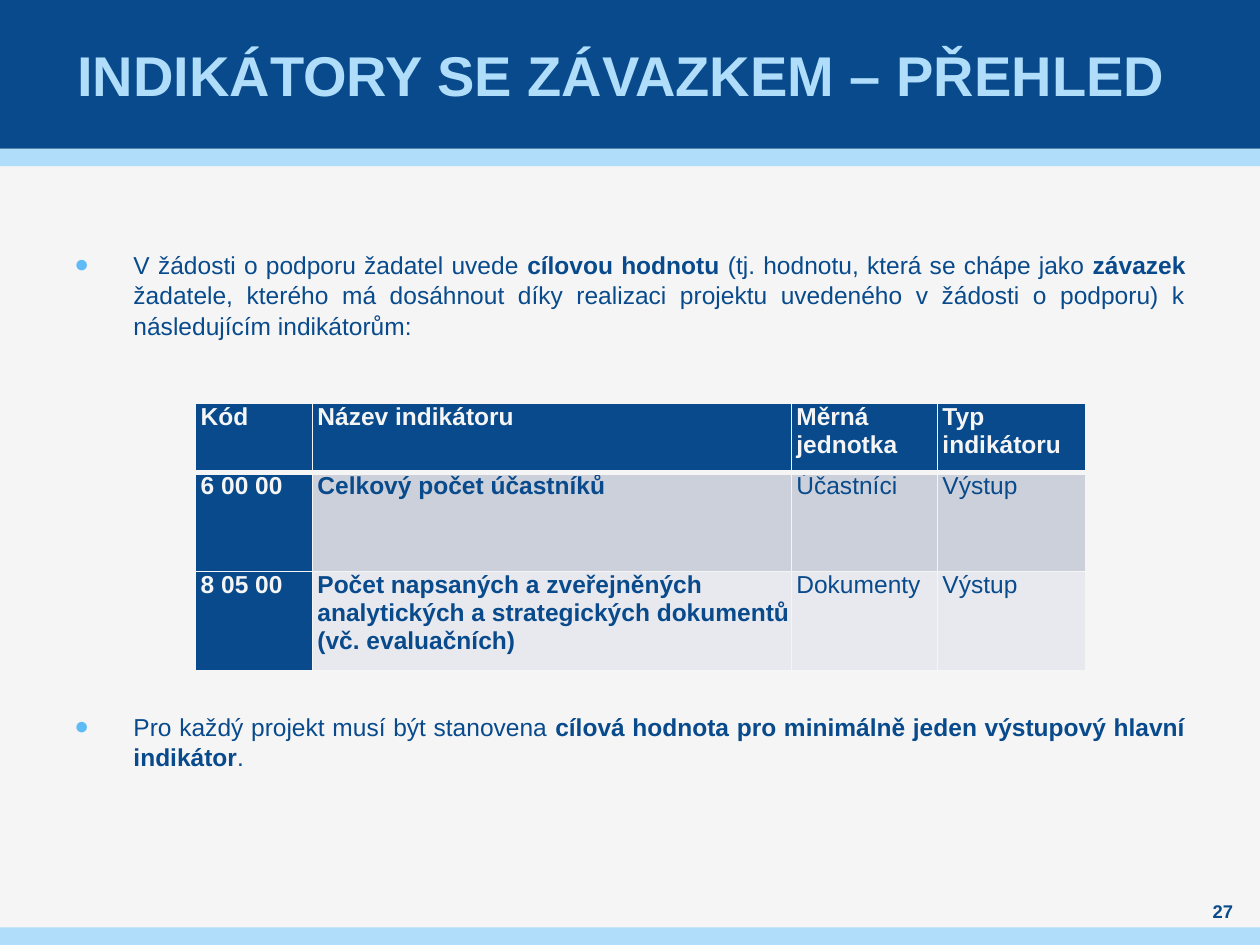
from lxml.etree import SubElement
from pptx import Presentation
from pptx.dml.color import RGBColor
from pptx.enum.shapes import MSO_SHAPE
from pptx.enum.text import MSO_ANCHOR, PP_ALIGN
from pptx.oxml.ns import qn
from pptx.util import Pt

NAVY = RGBColor(0x08, 0x4A, 0x8B)
SKY = RGBColor(0xAF, 0xDD, 0xFA)
BULLET_BLUE = RGBColor(0x5F, 0xBB, 0xF5)
OFF_WHITE = RGBColor(0xF5, 0xF5, 0xF5)
GREY = RGBColor(0xCC, 0xD0, 0xDA)
LIGHT_GREY = RGBColor(0xE7, 0xE9, 0xEE)

INDENT = Pt(33.8)
BODY_SIZE = 14
COLUMN_WIDTHS = (66.7, 273.7, 83.5, 85)
ROW_HEIGHTS = (39.6, 56.7, 56.7)
ROW_FILLS = (NAVY, GREY, LIGHT_GREY)
INDICATORS = (
    ("Kód", "Název indikátoru", "Měrná jednotka", "Typ indikátoru"),
    ("6 00 00", "Celkový počet účastníků", "Účastníci", "Výstup"),
    ("8 05 00", "Počet napsaných a zveřejněných analytických a strategických "
     "dokumentů (vč. evaluačních)", "Dokumenty", "Výstup"),
)
COMMITMENT = (
    ("V žádosti o podporu žadatel uvede ", False),
    ("cílovou hodnotu ", True),
    ("(tj. hodnotu, která se chápe jako ", False),
    ("závazek", True),
    (" žadatele, kterého má dosáhnout díky realizaci projektu uvedeného "
     "v žádosti o podporu) k následujícím indikátorům:", False),
)
REQUIREMENT = (
    ("Pro každý projekt musí být stanovena ", False),
    ("cílová hodnota pro minimálně jeden výstupový hlavní indikátor", True),
    (".", False),
)


def style_font(font, size, color, bold=None):
    font.name = "Arial"
    font.size = Pt(size)
    font.color.rgb = color
    font.bold = bold


def add_band(page, top, height, color):
    band = page.shapes.add_shape(MSO_SHAPE.RECTANGLE, 0, Pt(top), Pt(720), Pt(height))
    band.shadow.inherit = False
    band.fill.solid()
    band.fill.fore_color.rgb = color
    band.line.fill.background()


def add_text_box(page, left, top, width, height, anchor=MSO_ANCHOR.TOP):
    box = page.shapes.add_textbox(Pt(left), Pt(top), Pt(width), Pt(height))
    frame = box.text_frame
    frame.word_wrap = True
    frame.vertical_anchor = anchor
    frame.margin_left = frame.margin_right = 0
    frame.margin_top = frame.margin_bottom = 0
    return frame


def add_label(page, left, top, width, height, text, size, color):
    frame = add_text_box(page, left, top, width, height, MSO_ANCHOR.MIDDLE)
    paragraph = frame.paragraphs[0]
    paragraph.text = text
    paragraph.alignment = PP_ALIGN.CENTER
    style_font(paragraph.font, size, color, True)


def set_bullet(paragraph):
    properties = paragraph._p.get_or_add_pPr()
    properties.set("marL", str(INDENT))
    properties.set("indent", str(-INDENT))
    color = SubElement(properties, qn("a:buClr"))
    SubElement(color, qn("a:srgbClr"), val=str(BULLET_BLUE))
    SubElement(properties, qn("a:buFont"), typeface="Arial")
    SubElement(properties, qn("a:buChar"), char="●")


def add_bullet_text(page, top, height, spans):
    paragraph = add_text_box(page, 42.5, top, 635, height).paragraphs[0]
    paragraph.alignment = PP_ALIGN.JUSTIFY
    paragraph.line_spacing = 1.05
    set_bullet(paragraph)
    style_font(paragraph.font, BODY_SIZE, NAVY)
    for text, bold in spans:
        span = paragraph.add_run()
        span.text = text
        span.font.bold = bold


def set_borders(cell, widths):
    properties = cell._tc.get_or_add_tcPr()
    for index, (side, width) in enumerate(widths.items()):
        line = SubElement(properties, qn(f"a:ln{side}"), w=str(Pt(width)))
        fill = SubElement(line, qn("a:solidFill"))
        SubElement(fill, qn("a:srgbClr"), val=str(OFF_WHITE))
        properties.insert(index, line)


def fill_cell(cell, text, fill, color, bold, widths):
    cell.margin_left = cell.margin_right = 0
    cell.margin_top = cell.margin_bottom = 0
    cell.fill.solid()
    cell.fill.fore_color.rgb = fill
    set_borders(cell, widths)
    paragraph = cell.text_frame.paragraphs[0]
    paragraph.text = text
    paragraph.space_before = paragraph.space_after = Pt(3)
    paragraph._p.get_or_add_pPr().set("marL", str(Pt(2.9)))
    style_font(paragraph.font, BODY_SIZE, color, bold)


def add_indicator_table(page):
    frame = page.shapes.add_table(len(ROW_HEIGHTS), len(COLUMN_WIDTHS), Pt(111.8),
                                  Pt(230.4), Pt(sum(COLUMN_WIDTHS)), Pt(sum(ROW_HEIGHTS)))
    table = frame.table
    table.first_row = table.horz_banding = False
    for column, width in zip(table.columns, COLUMN_WIDTHS):
        column.width = Pt(width)
    for row, height in zip(table.rows, ROW_HEIGHTS):
        row.height = Pt(height)
    for r, texts in enumerate(INDICATORS):
        widths = {"L": 1, "R": 1, "T": 3 if r == 1 else 1, "B": 3 if r == 0 else 1}
        for c, text in enumerate(texts):
            heading = r == 0 or c == 0
            fill = NAVY if heading else ROW_FILLS[r]
            color = OFF_WHITE if heading else NAVY
            fill_cell(table.cell(r, c), text, fill, color, heading or c == 1, widths)


def main():
    deck = Presentation()
    deck.slide_width, deck.slide_height = Pt(720), Pt(540)
    page = deck.slides.add_slide(deck.slide_layouts[6])
    page.background.fill.solid()
    page.background.fill.fore_color.rgb = OFF_WHITE
    add_band(page, 85, 10, SKY)
    add_band(page, 0, 85, NAVY)
    add_band(page, 530, 10, SKY)
    add_label(page, 28, 0, 663, 85, "INDIKÁTORY SE ZÁVAZKEM – PŘEHLED ", 32, SKY)
    add_bullet_text(page, 141.8, 52, COMMITMENT)
    add_bullet_text(page, 405.8, 35, REQUIREMENT)
    add_label(page, 680.4, 513.4, 36.7, 14.4, "27", 10.5, NAVY)
    add_indicator_table(page)
    deck.save("out.pptx")


if __name__ == "__main__":
    main()
